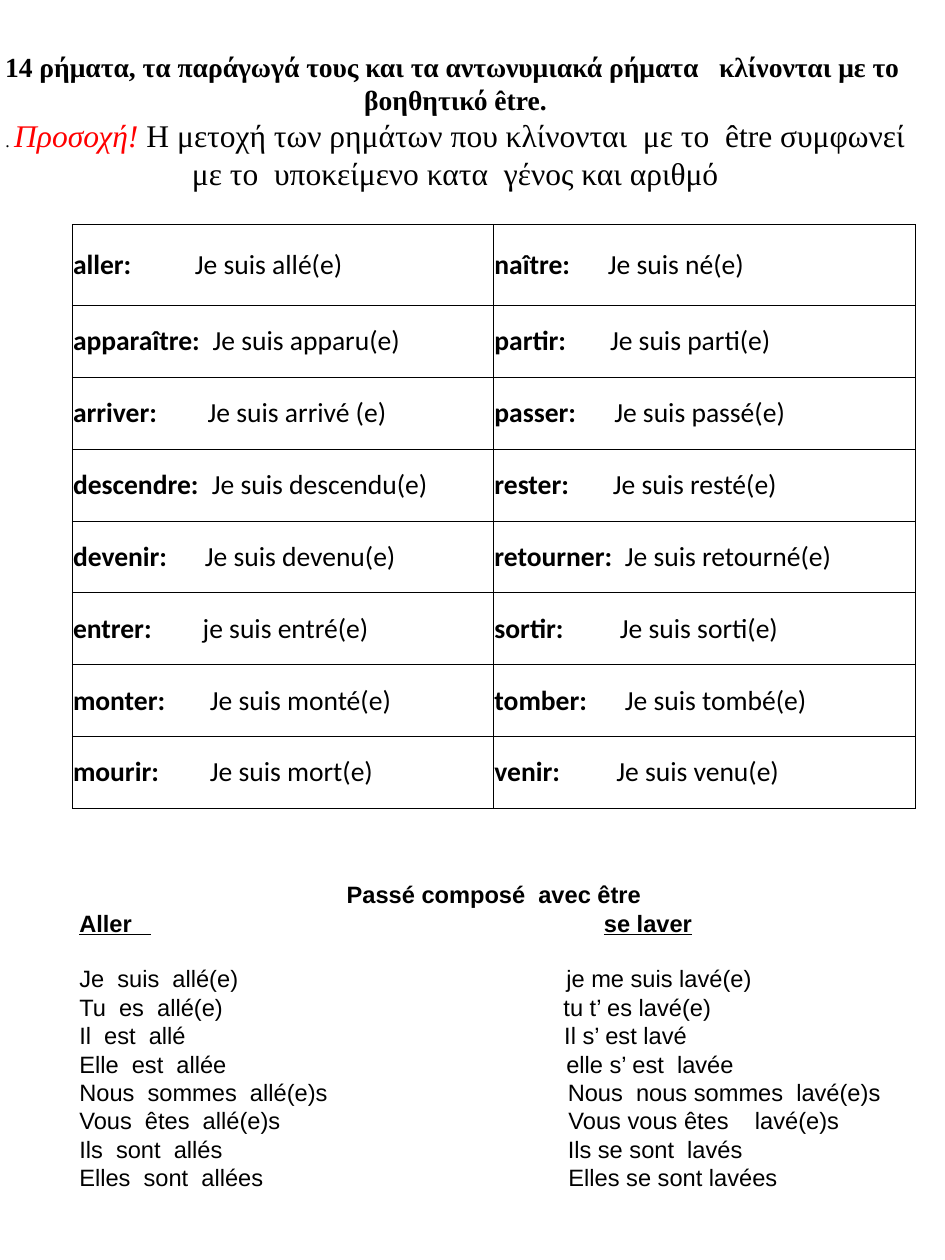
from lxml import etree
from pptx import Presentation
from pptx.dml.color import RGBColor
from pptx.enum.text import MSO_ANCHOR, MSO_AUTO_SIZE, PP_ALIGN
from pptx.oxml.ns import qn
from pptx.util import Pt

PX = 9144  # 100 px to the inch
CENTER, LEFT = PP_ALIGN.CENTER, PP_ALIGN.LEFT
MIDDLE, GROW = MSO_ANCHOR.MIDDLE, MSO_AUTO_SIZE.SHAPE_TO_FIT_TEXT
BLACK, RED, WHITE = "000000", "FF0000", "FFFFFF"

# Verb, example and px from the cell edge to the example
VERBS = [
    [("aller:", "Je suis allé(e)", 172), ("naître:", "Je suis né(e)", 160)],
    [("apparaître:", "Je suis apparu(e)", 197), ("partir:", "Je suis parti(e)", 163)],
    [("arriver:", "Je suis arrivé (e)", 190), ("passer:", "Je suis passé(e)", 169)],
    [("descendre:", "Je suis descendu(e)", 196), ("rester:", "Je suis resté(e)", 167)],
    [("devenir:", "Je suis devenu(e)", 186), ("retourner:", "Je suis retourné(e)", 184)],
    [("entrer:", "je suis entré(e)", 183), ("sortir:", "Je suis sorti(e)", 177)],
    [("monter:", "Je suis monté(e)", 193), ("tomber:", "Je suis tombé(e)", 184)],
    [("mourir:", "Je suis mort(e)", 193), ("venir:", "Je suis venu(e)", 172)],
]

# Form of aller, form of se laver and px to the second form
FORMS = [
    ("Je  suis  allé(e)", "je me suis lavé(e)", 687),
    ("Tu  es  allé(e)", "tu t’ es lavé(e)", 683),
    ("Il  est  allé", "Il s’ est lavé", 684),
    ("Elle  est  allée", "elle s’ est  lavée", 687),
    ("Nous  sommes  allé(e)s", "Nous  nous sommes  lavé(e)s", 689),
    ("Vous  êtes  allé(e)s", "Vous vous êtes    lavé(e)s", 690),
    ("Ils  sont  allés", "Ils se sont  lavés", 689),
    ("Elles  sont  allées", "Elles se sont lavées", 690),
]


def px(*nums):
    return [round(n * PX) for n in nums]


def color(code):
    return RGBColor.from_string(code)


def add_run(para, text, font, size, ink=BLACK, **style):
    run = para.add_run()
    run.text = text
    look = {"name": font, "size": Pt(size), "bold": False, **style}
    for key, val in look.items():
        setattr(run.font, key, val)
    run.font.color.rgb = color(ink)


def set_tab(para, pos):
    props = para._p.get_or_add_pPr()
    tabs = etree.SubElement(props, qn("a:tabLst"))
    etree.SubElement(tabs, qn("a:tab"), pos=str(pos * PX), algn="l")


def add_box(slide, box):
    frame = slide.shapes.add_textbox(*px(*box)).text_frame
    frame.word_wrap = True
    frame.auto_size = GROW
    return frame


def add_border(cell):
    props = cell._tc.get_or_add_tcPr()
    for spot, side in enumerate(("lnL", "lnR", "lnT", "lnB")):
        line = etree.Element(qn("a:" + side), w=str(Pt(1)))
        fill = etree.SubElement(line, qn("a:solidFill"))
        etree.SubElement(fill, qn("a:srgbClr"), val=BLACK)
        props.insert(spot, line)


def add_intro(slide, box):
    font = "Times New Roman"
    frame = add_box(slide, box)
    rule, note = frame.paragraphs[0], frame.add_paragraph()
    rule.alignment = note.alignment = CENTER
    add_run(rule, "14 ρήματα, τα παράγωγά τους και τα αντωνυμιακά ρήματα   "
            "κλίνονται με το  βοηθητικό être.", font, 28, bold=True)
    add_run(note, ". ", font, 18)
    add_run(note, "Προσοχή!", font, 32, RED, italic=True)
    add_run(note, " Η μετοχή των ρημάτων που κλίνονται  με το  être συμφωνεί "
            "με το  υποκείμενο κατα  γένος και αριθμό", font, 32)


def fill_cell(cell, verb, text, tab):
    look = {"vertical_anchor": MIDDLE}
    look.update({"margin_" + side: PX for side in ("left", "right", "top", "bottom")})
    for key, val in look.items():
        setattr(cell, key, val)
    cell.fill.background()
    add_border(cell)
    para = cell.text_frame.paragraphs[0]
    set_tab(para, tab)
    add_run(para, verb, "Calibri", 28, bold=True)
    add_run(para, "\t" + text, "Calibri", 28)


def add_verbs(slide, box, head):
    left, top, width, height = px(*box)
    count = len(VERBS)
    table = slide.shapes.add_table(count, 2, left, top, width, height).table
    table.first_row = table.horz_banding = False
    for col in table.columns:
        col.width = width // 2
    for row in table.rows:
        row.height = (height - head * PX) // (count - 1)
    table.rows[0].height = head * PX
    for r, pair in enumerate(VERBS):
        for c, entry in enumerate(pair):
            fill_cell(table.cell(r, c), *entry)


def add_forms(slide, box):
    font, size = "Arial", 24
    frame = add_box(slide, box)
    title, heads = frame.paragraphs[0], frame.add_paragraph()
    title.alignment, heads.alignment = CENTER, LEFT
    add_run(title, "Passé composé  avec être", font, size, bold=True)

    # Column heads
    set_tab(heads, 740)
    heads.space_after = Pt(28)
    add_run(heads, "Aller   ", font, size, bold=True, underline=True)
    add_run(heads, "\t", font, size)
    add_run(heads, "se laver", font, size, bold=True, underline=True)

    # Conjugated pairs
    for first, second, tab in FORMS:
        para = frame.add_paragraph()
        set_tab(para, tab)
        add_run(para, first + "\t" + second, font, size)


def main():
    deck = Presentation()
    deck.slide_width, deck.slide_height = px(1333, 1778)
    slide = deck.slides.add_slide(deck.slide_layouts[6])
    slide.background.fill.solid()
    slide.background.fill.fore_color.rgb = color(WHITE)
    add_intro(slide, (-24, 65, 1333, 212))
    add_verbs(slide, (102, 317, 1189, 824), 114)
    add_forms(slide, (102, 1237, 1189, 454))
    deck.save("out.pptx")


if __name__ == "__main__":
    main()
